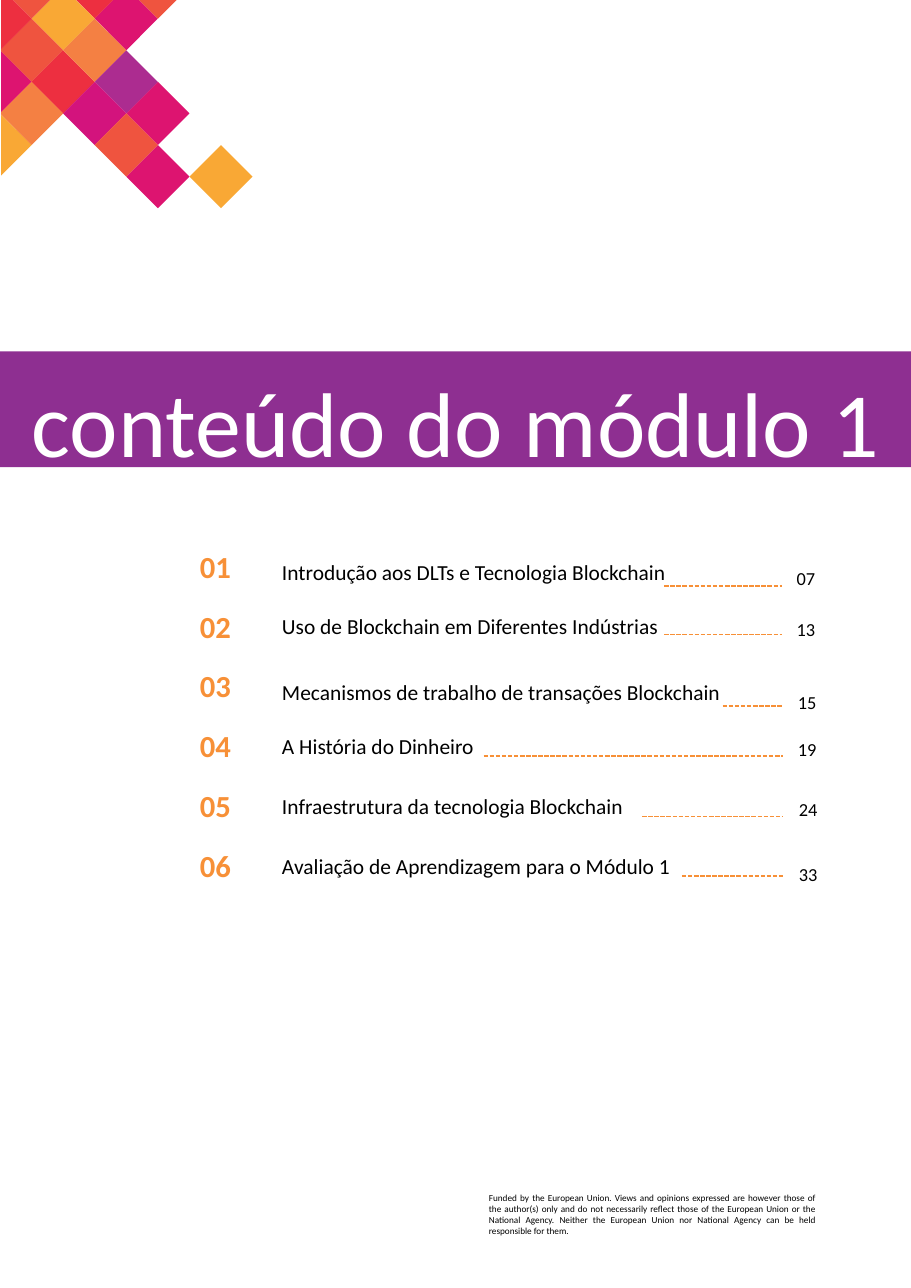
from dataclasses import dataclass

from lxml import etree
from pptx import Presentation
from pptx.dml.color import RGBColor
from pptx.enum.dml import MSO_LINE
from pptx.enum.shapes import MSO_CONNECTOR, MSO_SHAPE
from pptx.enum.text import MSO_ANCHOR, MSO_AUTO_SIZE, PP_ALIGN
from pptx.oxml.ns import qn
from pptx.util import Pt

LEFT, CENTER, RIGHT, JUSTIFY = PP_ALIGN.LEFT, PP_ALIGN.CENTER, PP_ALIGN.RIGHT, PP_ALIGN.JUSTIFY
TOP, MIDDLE = MSO_ANCHOR.TOP, MSO_ANCHOR.MIDDLE
RECTANGLE, STRAIGHT, DASH = MSO_SHAPE.RECTANGLE, MSO_CONNECTOR.STRAIGHT, MSO_LINE.SQUARE_DOT
NO_AUTOFIT = MSO_AUTO_SIZE.NONE

WHITE = RGBColor(0xFF, 0xFF, 0xFF)
BLACK = RGBColor(0x00, 0x00, 0x00)
PURPLE = RGBColor(0x8E, 0x2F, 0x91)
ORANGE = RGBColor(0xF7, 0x90, 0x37)
RED = RGBColor(0xED, 0x2F, 0x40)
PINK = RGBColor(0xDD, 0x14, 0x70)
MAGENTA = RGBColor(0xD3, 0x13, 0x7D)
VIOLET = RGBColor(0xAC, 0x2C, 0x90)
VERMILION = RGBColor(0xEF, 0x54, 0x3F)
AMBER = RGBColor(0xF9, 0xA8, 0x35)
APRICOT = RGBColor(0xF4, 0x80, 0x43)

FONT = "Calibri"
LINE_HEIGHT = 1.22  # height of one Calibri line, in font sizes
SLIDE_WIDTH, SLIDE_HEIGHT = 595.44, 841.68

TILE_STEP = 20.64
TILE_LEFT, TILE_TOP = 0.72, 0
FIRST_ROW = 12.24

NUMBER_SIZE, ENTRY_SIZE, PAGE_SIZE = 20, 14, 12
NUMBER_CENTER, NUMBER_PITCH = 370.08, 39.46
PAGE_WIDTH, PAGE_HEIGHT = 36, 27.36


@dataclass(frozen=True)
class Tile:
    column: int
    row: int
    color: RGBColor


@dataclass(frozen=True)
class Entry:
    text: str
    center: float
    page: str
    page_right: float
    page_center: float
    leader_start: float
    leader_end: float
    leader_y: float


TILES = [
    Tile(3, -1, RED), Tile(4, 0, PINK), Tile(5, -1, VERMILION), Tile(2, 0, AMBER),
    Tile(1, 1, VERMILION), Tile(2, 2, RED), Tile(3, 1, APRICOT), Tile(0, 2, PINK),
    Tile(0, 4, AMBER), Tile(1, 3, APRICOT), Tile(7, 5, AMBER), Tile(5, 5, PINK),
    Tile(5, 3, PINK), Tile(4, 2, VIOLET), Tile(3, 3, MAGENTA), Tile(4, 4, VERMILION),
    Tile(1, -1, VERMILION), Tile(0, 0, RED),
]

ENTRIES = [
    Entry("Introdução aos DLTs e Tecnologia Blockchain",
          374.04, "07", 540, 378, 434.16, 511.2, 383.04),
    Entry("Uso de Blockchain em Diferentes Indústrias",
          409.68, "13", 540, 411.12, 434.16, 511.2, 414.72),
    Entry("Mecanismos de trabalho de transações Blockchain",
          452.88, "15", 540.72, 458.64, 472.32, 511.92, 461.52),
    Entry("A História do Dinheiro",
          488.16, "19", 540.72, 489.6, 316.08, 511.92, 493.92),
    Entry("Infraestrutura da tecnologia Blockchain",
          527.76, "24", 541.44, 528.48, 419.76, 511.92, 533.52),
    Entry("Avaliação de Aprendizagem para o Módulo 1",
          567.36, "33", 541.44, 570.96, 445.68, 511.92, 572.4),
]

FUNDING_NOTE = (
    "Funded by the European Union. Views and opinions expressed are however those of "
    "the author(s) only and do not necessarily reflect those of the European Union or the "
    "National Agency. Neither the European Union nor National Agency can be held "
    "responsible for them."
)


def place(shape, left: float, top: float, width: float, height: float) -> None:
    shape.left, shape.top = Pt(left), Pt(top)
    shape.width, shape.height = Pt(width), Pt(height)


def write(paragraph, text: str, *, size: float, color: RGBColor = BLACK,
          bold: bool = False, align=LEFT, space_before: float = 0) -> None:
    paragraph.alignment = align
    paragraph.space_before = Pt(space_before)
    run = paragraph.add_run()
    run.text = text
    run.font.name, run.font.size, run.font.bold = FONT, Pt(size), bold
    run.font.color.rgb = color


def prepare_frame(shape, *, margin: float = 0, anchor=TOP):
    frame = shape.text_frame
    frame.word_wrap = True
    frame.auto_size = NO_AUTOFIT
    frame.vertical_anchor = anchor
    frame.margin_left = frame.margin_right = Pt(margin)
    frame.margin_top = frame.margin_bottom = Pt(margin / 2)
    return frame


def add_text(slide, box: tuple[float, float, float, float], text: str, *,
             anchor=TOP, **text_format) -> None:
    text_box = slide.shapes.add_textbox(*map(Pt, box))
    frame = prepare_frame(text_box, margin=7.2, anchor=anchor)
    write(frame.paragraphs[0], text, **text_format)


def fill_list(placeholder, texts: list[str], centers: list[float], *,
              left: float, width: float, size: float, **text_format) -> None:
    """Write one line per text, spaced so that each is centred on its height."""
    line = size * LINE_HEIGHT
    top = centers[0] - line / 2
    place(placeholder, left, top, width, centers[-1] + line / 2 - top)
    frame = prepare_frame(placeholder)
    previous = centers[0] - line
    for index, (text, center) in enumerate(zip(texts, centers)):
        paragraph = frame.add_paragraph() if index else frame.paragraphs[0]
        write(paragraph, text, size=size, space_before=center - previous - line, **text_format)
        properties = paragraph._p.get_or_add_pPr()
        properties.set("marL", "0")
        properties.set("indent", "0")
        etree.SubElement(properties, qn("a:buNone"))
        previous = center


def clip(points: list[tuple[float, float]], axis: int, limit: float) -> list[tuple[float, float]]:
    """Keep the part of a polygon whose coordinate on the axis is at least the limit."""
    kept = []
    for start, end in zip(points, points[1:] + points[:1]):
        if start[axis] >= limit:
            kept.append(start)
        if (start[axis] >= limit) != (end[axis] >= limit):
            share = (limit - start[axis]) / (end[axis] - start[axis])
            kept.append(tuple(a + share * (b - a) for a, b in zip(start, end)))
    return kept


def paint(shape, color: RGBColor) -> None:
    shape.fill.solid()
    shape.fill.fore_color.rgb = color
    shape.line.fill.background()
    shape.shadow.inherit = False


def add_tile(shapes, tile: Tile) -> None:
    x, y = tile.column * TILE_STEP, FIRST_ROW + tile.row * TILE_STEP
    diamond = [(x - TILE_STEP, y), (x, y - TILE_STEP), (x + TILE_STEP, y), (x, y + TILE_STEP)]
    outline = clip(clip(diamond, 0, TILE_LEFT), 1, TILE_TOP)
    corners = [(Pt(px), Pt(py)) for px, py in outline]
    builder = shapes.build_freeform(*corners[0])
    builder.add_line_segments(corners[1:], close=True)
    paint(builder.convert_to_shape(), tile.color)


def add_leader(slide, entry: Entry) -> None:
    leader = slide.shapes.add_connector(
        STRAIGHT, Pt(entry.leader_start), Pt(entry.leader_y),
        Pt(entry.leader_end), Pt(entry.leader_y))
    leader.line.color.rgb = ORANGE
    leader.line.width = Pt(1)
    leader.line.dash_style = DASH
    etree.SubElement(leader.element.spPr, qn("a:effectLst"))


def main() -> None:
    presentation = Presentation()
    presentation.slide_width, presentation.slide_height = Pt(SLIDE_WIDTH), Pt(SLIDE_HEIGHT)
    slide = presentation.slides.add_slide(presentation.slide_layouts.get_by_name("Two Content"))
    title, numbers, entries = slide.placeholders

    band = slide.shapes.add_shape(RECTANGLE, 0, Pt(229.68), Pt(SLIDE_WIDTH), Pt(75.6))
    paint(band, PURPLE)
    place(title, 0, 239, SLIDE_WIDTH, 74)
    write(prepare_frame(title).paragraphs[0], "conteúdo do módulo 1",
          size=60, color=WHITE, align=CENTER)
    band.element.addnext(title.element)  # brings the title in front of the band

    mosaic = slide.shapes.add_group_shape()
    for tile in TILES:
        add_tile(mosaic.shapes, tile)

    fill_list(numbers, [f"{index:02}" for index in range(1, len(ENTRIES) + 1)],
              [NUMBER_CENTER + NUMBER_PITCH * index for index in range(len(ENTRIES))],
              left=115.2, width=51.12, size=NUMBER_SIZE, color=ORANGE, bold=True, align=CENTER)
    fill_list(entries, [entry.text for entry in ENTRIES], [entry.center for entry in ENTRIES],
              left=184.32, width=300, size=ENTRY_SIZE)
    for entry in ENTRIES:
        page_box = (entry.page_right - PAGE_WIDTH, entry.page_center - PAGE_HEIGHT / 2,
                    PAGE_WIDTH, PAGE_HEIGHT)
        add_text(slide, page_box, entry.page, size=PAGE_SIZE, align=RIGHT, anchor=MIDDLE)
        add_leader(slide, entry)

    add_text(slide, (312.48, 775.44, 227.52, 36), FUNDING_NOTE, size=6, align=JUSTIFY)
    presentation.save("out.pptx")


if __name__ == "__main__":
    main()
